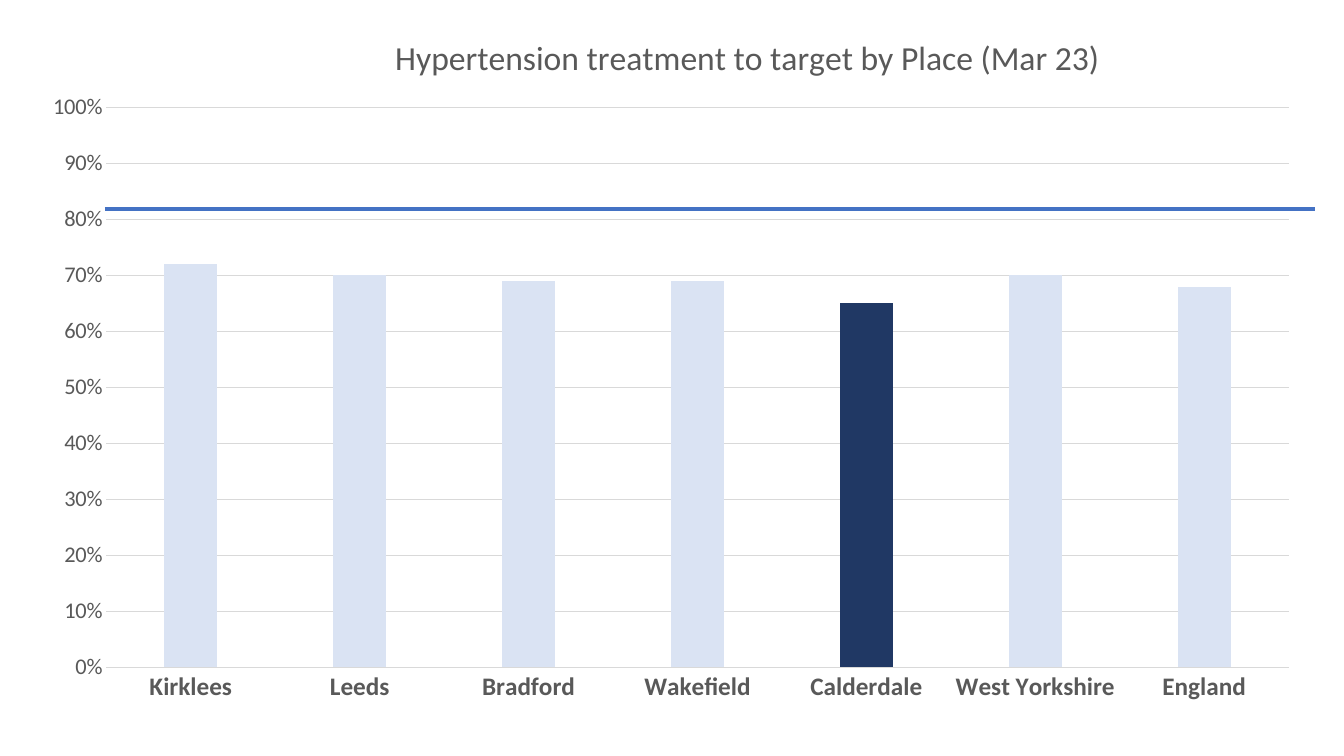
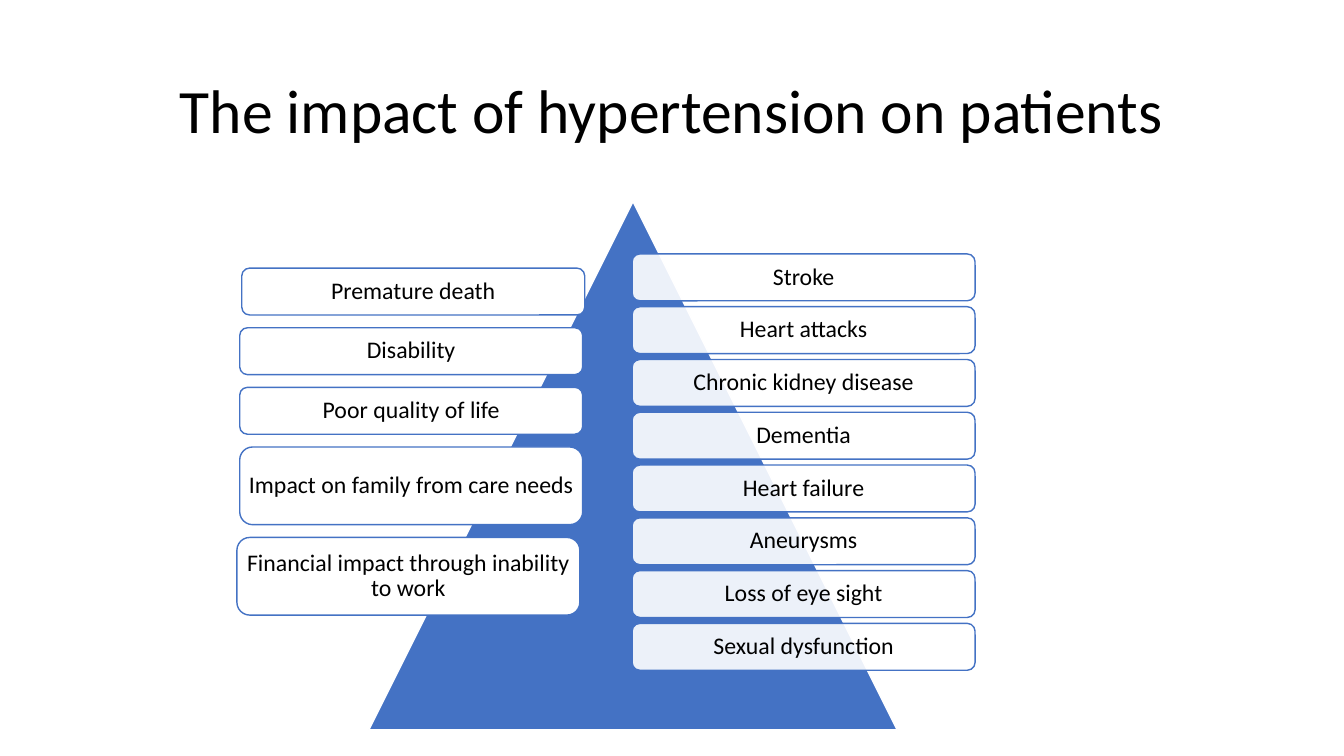
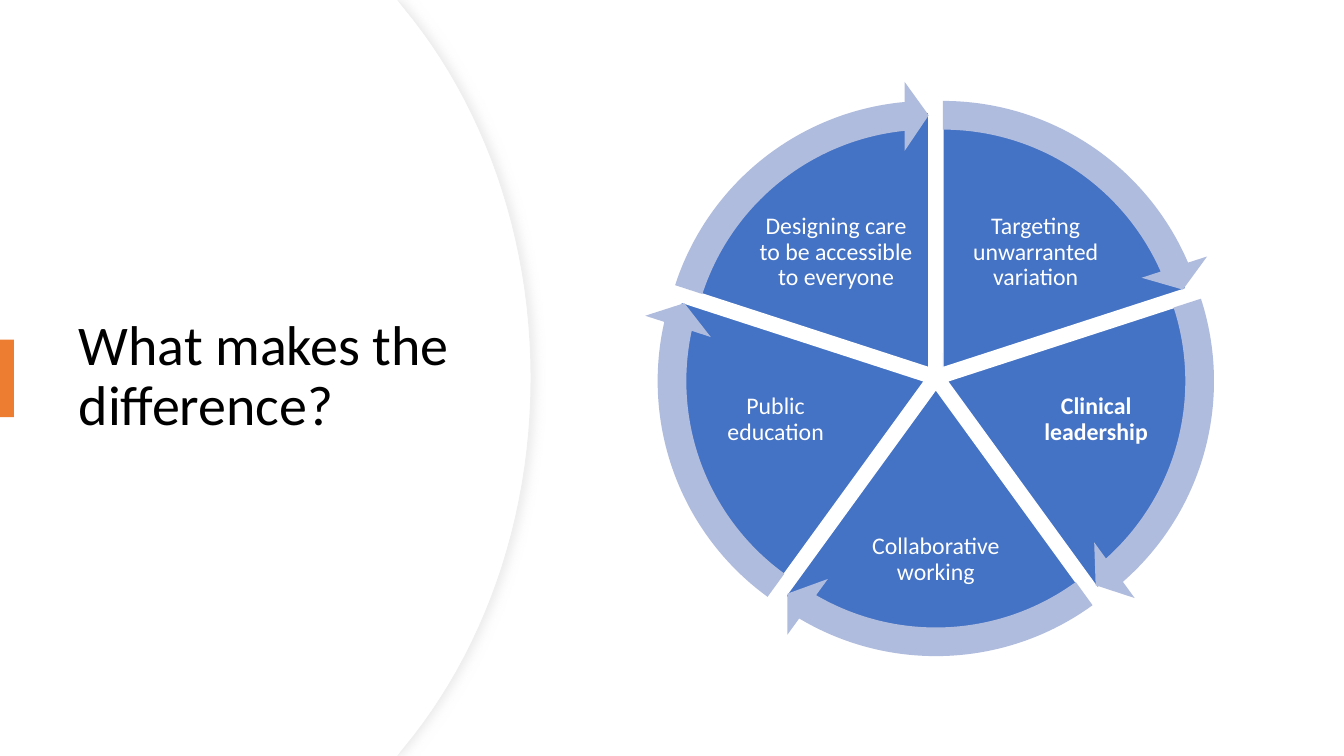
import math

from lxml import etree
from pptx import Presentation
from pptx import util as u
from pptx.chart.data import CategoryChartData
from pptx.dml.color import RGBColor
from pptx.enum import chart as charts, shapes, text
from pptx.oxml import parse_xml
from pptx.oxml.ns import nsdecls, qn

Pt = u.Pt
FONT = "Calibri"
LABEL_SIZE = 17
COLORS = {
    "blue": "4472C4",
    "pale_blue": "DAE3F3",
    "navy": "203864",
    "ring": "B0BCDE",
    "orange": "ED7D31",
    "white": "FFFFFF",
    "black": "000000",
    "gray": "595959",
    "grid": "D9D9D9",
    "edge": "EFEFEF",
}
MIDDLE = text.MSO_ANCHOR.MIDDLE
CENTER = text.PP_ALIGN.CENTER
LEFT = text.PP_ALIGN.LEFT


# Shared styling
def rgb(name):
    return RGBColor.from_string(COLORS[name])


def points(*lengths):
    return [Pt(length) for length in lengths]


def style_font(font, size, color, bold=False):
    font.name = FONT
    font.size = Pt(size)
    font.bold = bold
    font.color.rgb = rgb(color)


def style_line(line, color, width=0.75):
    line.color.rgb = rgb(color)
    line.width = Pt(width)


def style_shape(shape, fill, line=None, width=1, opacity=100):
    shape.shadow.inherit = False
    shape.fill.solid()
    shape.fill.fore_color.rgb = rgb(fill)
    if opacity < 100:
        color = shape.fill._xPr.find(qn("a:solidFill"))[0]
        etree.SubElement(color, qn("a:alpha"), val=str(opacity * 1000))
    if line:
        style_line(shape.line, line, width)
    else:
        shape.line.fill.background()


def write(shape, words, size, color, bold=False, align=CENTER, inset=None):
    frame = shape.text_frame
    frame.word_wrap = True
    frame.auto_size = text.MSO_AUTO_SIZE.NONE
    frame.vertical_anchor = MIDDLE
    if inset is not None:
        frame.margin_left = frame.margin_right = Pt(inset)
        frame.margin_top = frame.margin_bottom = Pt(inset)
    frame.text = words
    paragraph = frame.paragraphs[0]
    paragraph.alignment = align
    paragraph.line_spacing = 0.9
    style_font(paragraph.runs[0].font, size, color, bold)


def add_preset(slide, preset, box, fill, line=None, opacity=100):
    shape = slide.shapes.add_shape(preset, *points(*box))
    style_shape(shape, fill, line, opacity=opacity)
    return shape


def place_title(slide, box, words, size, align):
    title = slide.shapes.title
    title.left, title.top, title.width, title.height = points(*box)
    write(title, words, size, "black", align=align)
    slide.shapes._spTree.append(title._element)


# Slide 1: treatment chart with target line
def set_layout(parent, index, target, **fractions):
    for old in parent.findall(qn("c:layout")):
        parent.remove(old)
    layout = parse_xml(f"<c:layout {nsdecls('c')}><c:manualLayout/></c:layout>")
    settings = {"layoutTarget": target} if target else {}
    settings.update(xMode="edge", yMode="edge", **fractions)
    for tag, value in settings.items():
        etree.SubElement(layout[0], qn(f"c:{tag}"), val=str(value))
    parent.insert(index, layout)


def add_treatment_chart(slide, box):
    data = CategoryChartData(number_format="0%")
    data.categories = ["Kirklees", "Leeds", "Bradford", "Wakefield",
                       "Calderdale", "West Yorkshire", "England"]
    data.add_series("Series 1", [0.72, 0.7, 0.69, 0.69, 0.65, 0.7, 0.68])
    chart = slide.shapes.add_chart(
        charts.XL_CHART_TYPE.COLUMN_CLUSTERED, *points(*box), data).chart
    chart.has_legend = False
    style_font(chart.font, 16, "black")

    # Title and plot position
    chart.has_title = True
    heading = chart.chart_title
    heading.include_in_layout = False
    heading.text_frame.text = "Hypertension treatment to target by Place (Mar 23)"
    style_font(heading.text_frame.paragraphs[0].runs[0].font, 24, "gray")
    set_layout(heading._element, 1, None, x=0.28, y=0.04)
    plot_area = chart._chartSpace.chart.plotArea
    set_layout(plot_area, 0, "inner", x=0.06, y=0.15, w=0.92, h=0.78)

    # Axes
    places, share = chart.category_axis, chart.value_axis
    for axis, size, bold in ((places, 18, True), (share, 16, False)):
        axis.major_tick_mark = axis.minor_tick_mark = charts.XL_TICK_MARK.NONE
        style_font(axis.tick_labels.font, size, "gray", bold)
    style_line(places.format.line, "grid")
    share.format.line.fill.background()
    share.minimum_scale, share.maximum_scale, share.major_unit = 0, 1, 0.1
    share.tick_labels.number_format = "0%"
    share.tick_labels.number_format_is_linked = False
    style_line(share.major_gridlines.format.line, "grid")

    # Columns, with Calderdale picked out
    plot = chart.plots[0]
    plot.gap_width, plot.overlap = 219, -27
    plot.vary_by_categories = False
    columns = plot.series[0]
    columns.invert_if_negative = False
    for column, color in ((columns, "pale_blue"), (columns.points[4], "navy")):
        column.format.fill.solid()
        column.format.fill.fore_color.rgb = rgb(color)


def add_target_line(slide, left, right, y):
    target = slide.shapes.add_connector(
        shapes.MSO_CONNECTOR.STRAIGHT, *points(left, y, right, y))
    style_line(target.line, "blue", 3)
    etree.SubElement(target._element.spPr, qn("a:effectLst"))


def build_treatment(prs):
    slide = prs.slides.add_slide(prs.slide_layouts[6])
    add_treatment_chart(slide, (20.9, 0, 918, 512.6))
    add_target_line(slide, 75, 939, 149.5)


# Slide 2: impact pyramid
def add_impact_column(slide, left, top, gap, impacts, opacity):
    for words, shift, height in impacts:
        impact = add_preset(slide, shapes.MSO_SHAPE.ROUNDED_RECTANGLE,
                            (left + shift, top, 245, height),
                            "white", "blue", opacity)
        write(impact, words, LABEL_SIZE, "black", inset=3.5)
        top += height + gap


def build_impact(prs):
    slide = prs.slides.add_slide(prs.slide_layouts[5])
    place_title(slide, (66, 28.8, 828, 104.4),
                "The impact of hypertension on patients", 44, CENTER)
    add_preset(slide, shapes.MSO_SHAPE.ISOSCELES_TRIANGLE,
               (263.5, 144, 377.3, 377.3), "blue", "white")
    one_line, two_lines = 33.5, 55.5
    conditions = ["Stroke", "Heart attacks", "Chronic kidney disease", "Dementia",
                  "Heart failure", "Aneurysms", "Loss of eye sight",
                  "Sexual dysfunction"]
    add_impact_column(slide, 451.5, 181.4, 4.2,
                      [(words, 0, one_line) for words in conditions], 90)
    burdens = [
        ("Premature death", 1.5, one_line),
        ("Disability", 0, one_line),
        ("Poor quality of life", 0, one_line),
        ("Impact on family from care needs", 0, two_lines),
        ("Financial impact through inability to work", -2, two_lines),
    ]
    add_impact_column(slide, 171.2, 191.5, 9.1, burdens, 100)


# Slide 3: curved title panel and cycle
def bezier(start, first, second, end, steps=24):
    for step in range(steps + 1):
        t = step / steps
        weights = ((1 - t) ** 3, 3 * t * (1 - t) ** 2, 3 * t ** 2 * (1 - t), t ** 3)
        yield tuple(sum(w * p[axis] for w, p in zip(weights, (start, first, second, end)))
                    for axis in (0, 1))


def add_curved_panel(slide, width, height):
    upper = list(bezier((width - 90.7, 5.8), (width - 34.6, 73.4),
                        (width, 167), (width, height / 2)))
    lower = [(x, height - y) for x, y in reversed(upper[:-1])]
    corner = 283.7
    outline = [(corner, 0), *upper, *lower, (corner, height), (0, height)]
    builder = slide.shapes.build_freeform(0, 0)
    builder.add_line_segments([points(*point) for point in outline], close=True)
    return builder.convert_to_shape()


def add_title_panel(slide, height):
    back = add_curved_panel(slide, 379.4, height)
    style_shape(back, "white", "edge", 0.75)
    effects = back._element.spPr.find(qn("a:effectLst"))
    shadow = etree.SubElement(effects, qn("a:outerShdw"), blurRad=str(Pt(7)),
                              dist=str(Pt(3)), dir="0", algn="l", rotWithShape="0")
    color = etree.SubElement(shadow, qn("a:srgbClr"), val=COLORS["grid"])
    etree.SubElement(color, qn("a:alpha"), val="50000")
    style_shape(add_curved_panel(slide, 378.7, height), "white")
    add_preset(slide, shapes.MSO_SHAPE.RECTANGLE, (0, 242.6, 10, 55.5), "orange")


def add_cycle(slide, center_x, center_y):
    # Words, then offset and size of the label
    steps = [
        ("Targeting unwarranted variation", 71.3, -89.3, 117.4, 78.5),
        ("Clinical leadership", 114.5, 30.2, 108.7, 87),
        ("Collaborative working", 0, 130.3, 104.4, 95.8),
        ("Public education", -114.5, 30.2, 108.7, 87),
        ("Designing care to be accessible to everyone", -71.3, -89.3, 117.4, 78.5),
    ]
    sweep = 360 / len(steps)
    unit = 0.6  # adjustment value of one degree
    push, head = 8.64, 3.28

    def add_sector(preset, size, index, fill, line=None):
        middle = math.radians(270 + sweep * (index + 0.5))
        x = center_x + push * math.cos(middle) - size / 2
        y = center_y + push * math.sin(middle) - size / 2
        return add_preset(slide, preset, (x, y, size, size), fill, line)

    def bounds(index):
        return [(270 + sweep * i) % 360 * unit for i in (index, index + 1)]

    # Wedges and labels
    for index, (words, dx, dy, width, height) in enumerate(steps):
        wedge = add_sector(shapes.MSO_SHAPE.PIE, 365, index, "blue", "white")
        wedge.adjustments[0], wedge.adjustments[1] = bounds(index)
        label = slide.shapes.add_textbox(*points(
            center_x + dx - width / 2, center_y + dy - height / 2, width, height))
        write(label, words, LABEL_SIZE, "white",
              bold=words == "Clinical leadership", inset=1.5)

    # Ring of arrows
    for index in range(len(steps)):
        arrow = add_sector(shapes.MSO_SHAPE.CIRCULAR_ARROW, 409.6, index, "ring")
        start, end = bounds(index)
        for i, value in enumerate((0.05, head, end - head, start, 0.06)):
            arrow.adjustments[i] = value


def build_difference(prs):
    slide = prs.slides.add_slide(prs.slide_layouts[5])
    add_title_panel(slide, 540)
    place_title(slide, (49, 91.4, 283.7, 356.4),
                "What makes the difference?", 40, LEFT)
    add_cycle(slide, 668.5, 269.6)


def main():
    prs = Presentation()
    prs.slide_width, prs.slide_height = points(960, 540)
    build_treatment(prs)
    build_impact(prs)
    build_difference(prs)
    prs.save("out.pptx")


if __name__ == "__main__":
    main()
